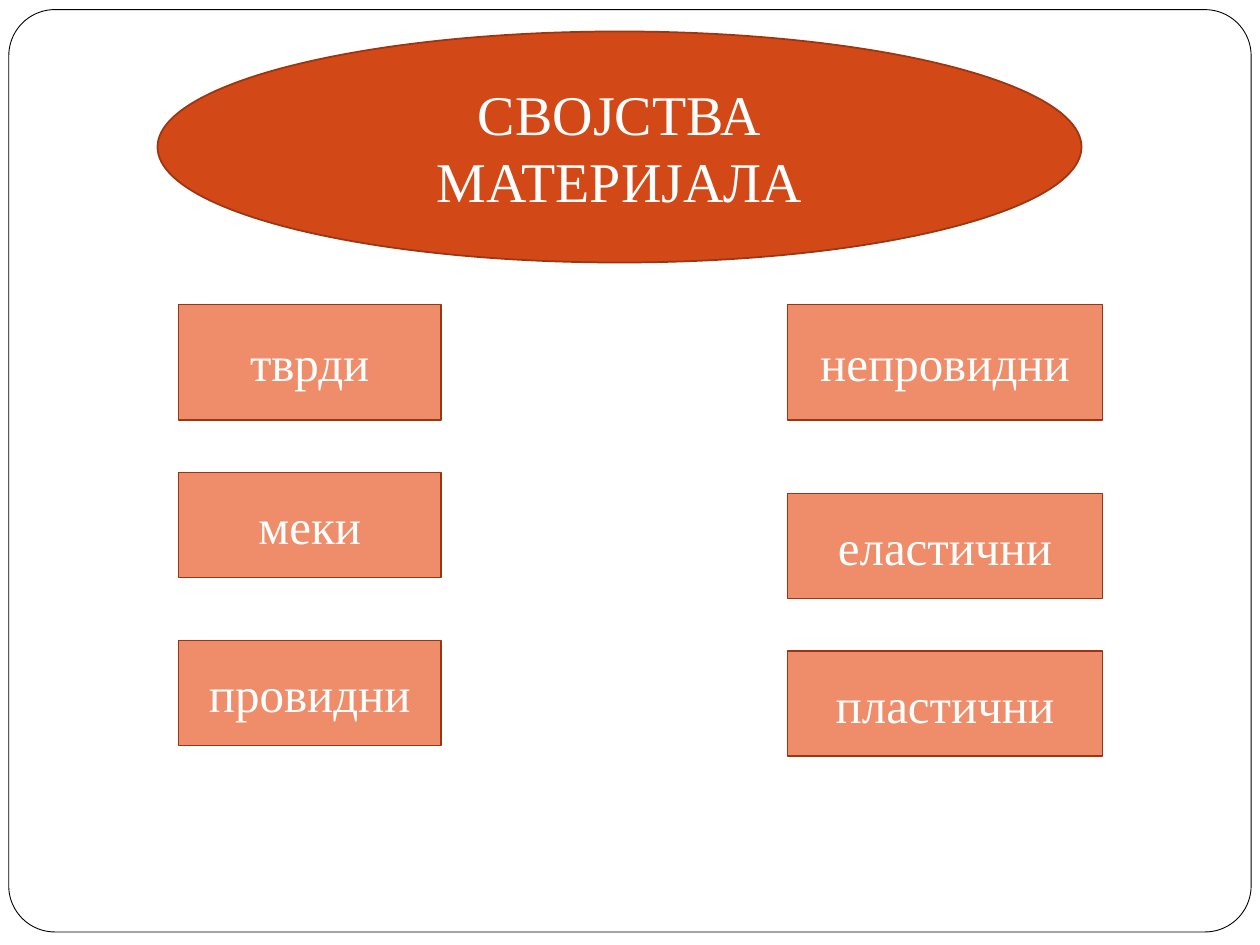
from pptx import Presentation
from pptx.dml.color import RGBColor
from pptx.enum.shapes import MSO_SHAPE
from pptx.enum.text import MSO_ANCHOR, PP_ALIGN
from pptx.util import Pt

TITLE = "СВОЈСТВА МАТЕРИЈАЛА"
COLUMNS = [
    {"left": 102, "width": 150,
     "boxes": [("тврди", 174, 66), ("меки", 270, 60), ("провидни", 366, 60)]},
    {"left": 450, "width": 180,
     "boxes": [("непровидни", 174, 66), ("еластични", 282, 60), ("пластични", 372, 60)]},
]
COLORS = {"white": "FFFFFF", "frame": "000000", "title": "D34817",
          "property": "EF8C6A", "outline": "9C3511"}
FONT = "Times New Roman"


def add_shape(slide, kind, bounds, fill, line, line_width):
    shape = slide.shapes.add_shape(kind, *[Pt(length) for length in bounds])
    shape.shadow.inherit = False
    shape.fill.solid()
    shape.fill.fore_color.rgb = RGBColor.from_string(COLORS[fill])
    shape.line.color.rgb = RGBColor.from_string(COLORS[line])
    shape.line.width = Pt(line_width)
    return shape


def add_label(slide, kind, bounds, fill, text, size):
    shape = add_shape(slide, kind, bounds, fill, "outline", 1)
    text_frame = shape.text_frame
    text_frame.text = text
    text_frame.word_wrap = True
    text_frame.vertical_anchor = MSO_ANCHOR.MIDDLE
    paragraph = text_frame.paragraphs[0]
    paragraph.alignment = PP_ALIGN.CENTER
    font = paragraph.runs[0].font
    font.name = FONT
    font.size = Pt(size)
    font.color.rgb = RGBColor.from_string(COLORS["white"])


def main():
    presentation = Presentation()
    presentation.slide_width = Pt(720)
    presentation.slide_height = Pt(540)
    slide = presentation.slides.add_slide(presentation.slide_layouts[6])

    frame = add_shape(slide, MSO_SHAPE.ROUNDED_RECTANGLE,
                      (5.04, 5.5, 709.92, 527.04), "white", "frame", 0.5)
    frame.adjustments[0] = 0.05

    add_label(slide, MSO_SHAPE.OVAL, (90, 18, 528, 132), "title", TITLE, 32)
    for column in COLUMNS:
        for text, top, height in column["boxes"]:
            bounds = (column["left"], top, column["width"], height)
            add_label(slide, MSO_SHAPE.RECTANGLE, bounds, "property", text, 28)

    presentation.save("out.pptx")


if __name__ == "__main__":
    main()
